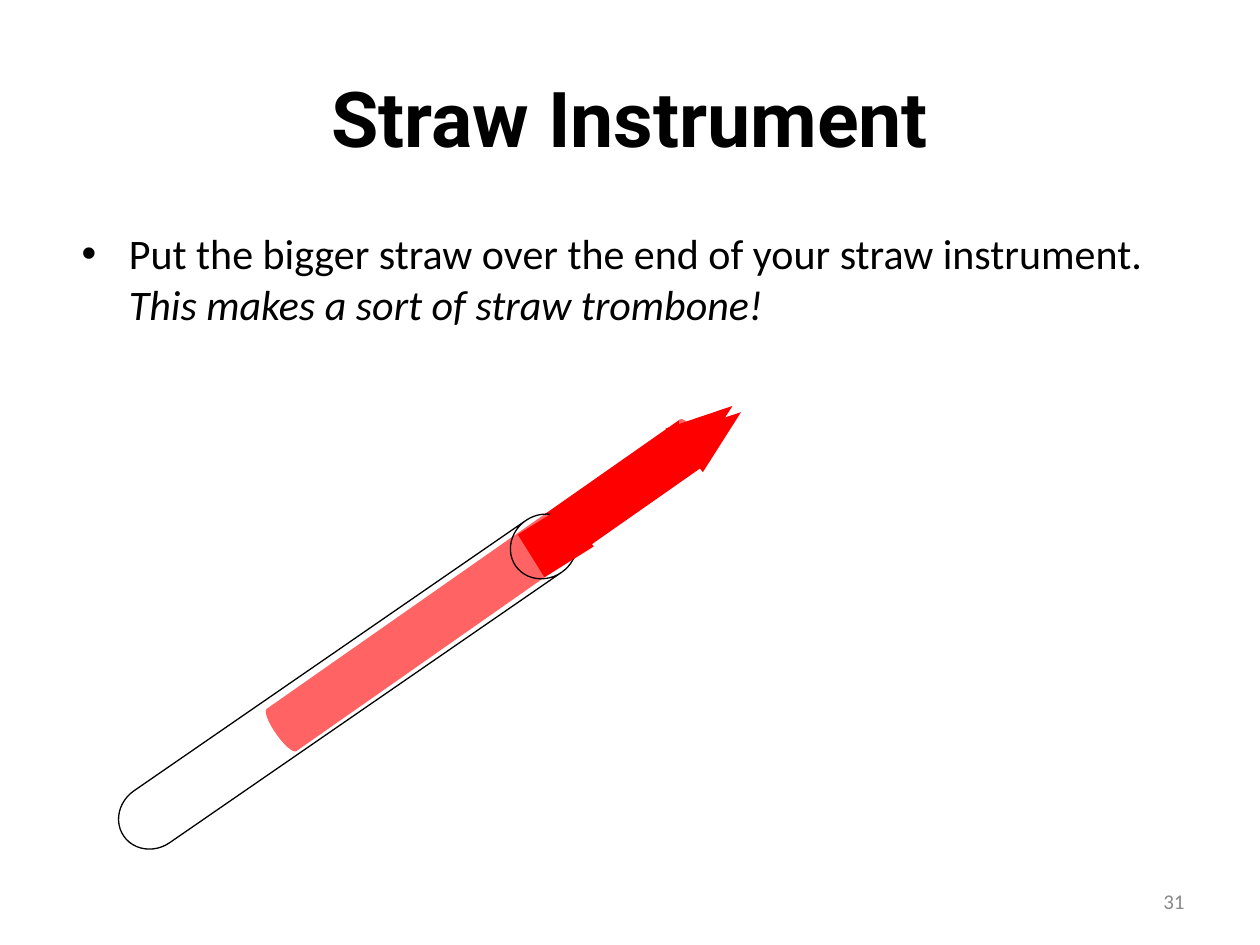
from pptx import Presentation
from pptx.dml.color import RGBColor
from pptx.enum.shapes import MSO_SHAPE as Kind
from pptx.enum.text import MSO_ANCHOR as Anchor, PP_ALIGN as Align
from pptx.oxml.ns import qn
from pptx.util import Pt
from lxml.etree import SubElement

BLACK = RGBColor(0, 0, 0)
WHITE = RGBColor(255, 255, 255)
RED = RGBColor(255, 0, 0)
GREY = RGBColor(0x89, 0x89, 0x89)

# Content: runs are (text, italic)
TITLE = [("Straw Instrument", False)]
BODY = [
    ("Put the bigger straw over the end of your straw instrument. ", False),
    ("This makes a sort of straw trombone!", True),
]
NUMBER = [("31", False)]

# Straw parts: left, top, width, height, rotation
SMALL_STRAW = (264.2, 186.5, 29.5, 295.9, 55)
BIG_STRAW = (180.7, 234, 36, 311, 55.4)
REED_TIPS = [(394.6, 228.2, 27.4, 38.2, 52.2), (390.2, 224.6, 26.6, 38.2, 52.2)]
STRAW_JOINT = (301, 294.5, 33.1, 28.8, 328)

deck = Presentation()
deck.slide_width, deck.slide_height = Pt(720), Pt(540)
page = deck.slides.add_slide(deck.slide_layouts[6])


def add_part(kind, place, color=RED):
    *frame, angle = place
    shape = page.shapes.add_shape(kind, *map(Pt, frame))
    shape.rotation = angle
    shape.shadow.inherit = False
    shape.fill.solid()
    shape.fill.fore_color.rgb = color
    shape.line.fill.background()
    return shape


def add_text(frame, runs, size, font="Calibri", color=BLACK, bold=False,
             align=Align.LEFT, anchor=Anchor.MIDDLE):
    box = page.shapes.add_textbox(*map(Pt, frame)).text_frame
    box.word_wrap = True
    box.vertical_anchor = anchor
    para = box.paragraphs[0]
    para.alignment = align
    for text, italic in runs:
        span = para.add_run()
        span.text = text
        span.font.name = font
        span.font.size = Pt(size)
        span.font.bold = bold
        span.font.italic = italic
        span.font.color.rgb = color
    return para


# Small straw, page number and title
add_part(Kind.CAN, SMALL_STRAW)
add_text((516.2, 500.4, 167.8, 28.8), NUMBER, 12, color=GREY, align=Align.RIGHT)
add_text((36, 21.6, 648, 90), TITLE, 44, "Roboto", bold=True, align=Align.CENTER)

# Big see-through straw
big_straw = add_part(Kind.CAN, BIG_STRAW, WHITE)
big_straw.adjustments[0] = 1.083
big_straw.line.color.rgb = BLACK
big_straw.line.width = Pt(0.75)
fill_color = big_straw.fill._xPr.find(qn("a:solidFill"))[0]
SubElement(fill_color, qn("a:alpha")).set("val", "39000")

# Reed tips
for tip in REED_TIPS:
    add_part(Kind.ISOSCELES_TRIANGLE, tip)

# Bulleted instruction
instruction = add_text((39.6, 126.7, 648, 356.4), BODY, 24, anchor=Anchor.TOP)
instruction.space_before = Pt(4.8)
properties = instruction._p.get_or_add_pPr()
properties.set("marL", str(Pt(27)))
properties.set("indent", str(-Pt(27)))
SubElement(properties, qn("a:buFont")).set("typeface", "Arial")
SubElement(properties, qn("a:buChar")).set("char", "•")

# Joint where the straws meet
add_part(Kind.RECTANGLE, STRAW_JOINT)

deck.save("out.pptx")
